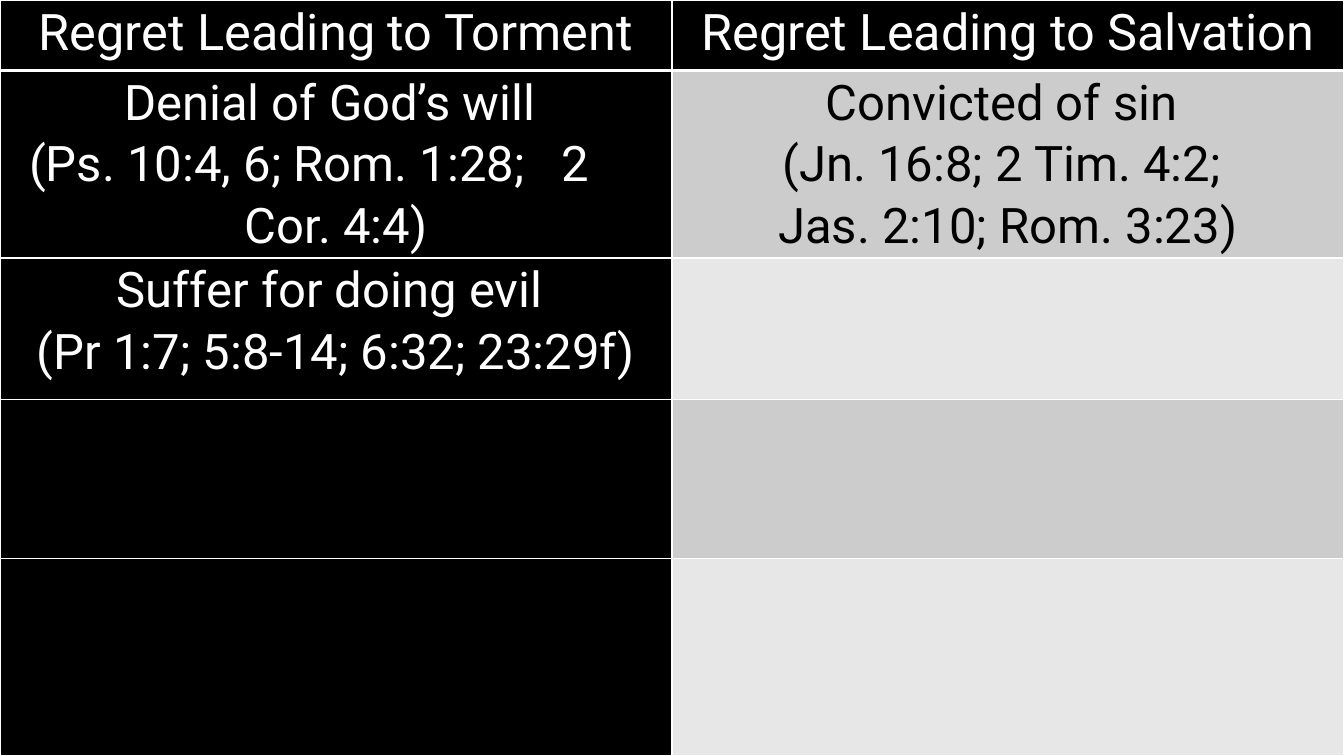
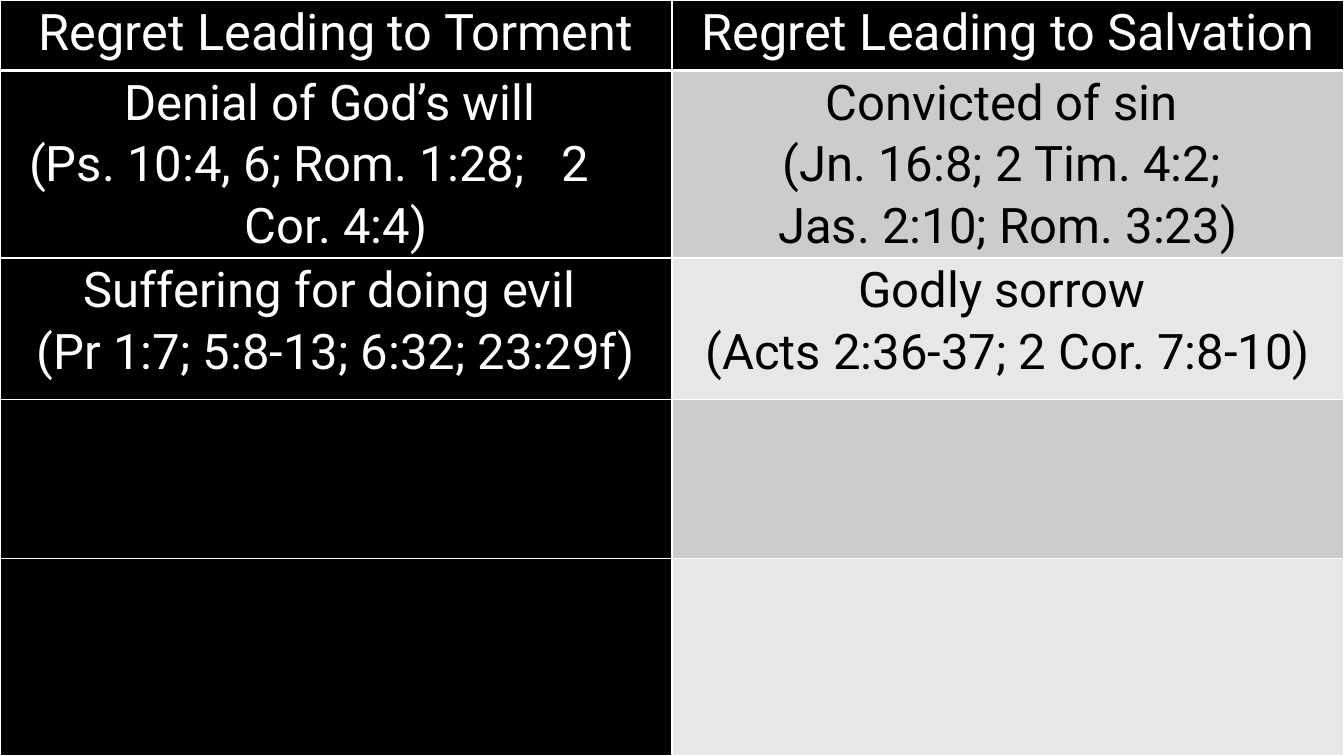
from pptx import Presentation
from pptx.dml.color import RGBColor
from pptx.enum.text import PP_ALIGN
from pptx.oxml.ns import qn
from pptx.util import Inches, Pt
from lxml.etree import SubElement

COLORS = {"black": "000000", "white": "FFFFFF", "mid": "CCCCCC", "light": "E7E7E7"}
FONT = "Roboto"
ROW_HEIGHTS = [0.7, 1.86, 1.4, 1.58, 1.96]
HEADERS = (["Regret Leading to Torment"], ["Regret Leading to Salvation"])
DENIAL = ["Denial of God’s will ", "(Ps. 10:4, 6; Rom. 1:28;\t2", "Cor. 4:4)"]
CONVICTED = ["Convicted of sin ", "(Jn. 16:8; 2 Tim. 4:2; ", "Jas. 2:10; Rom. 3:23)"]
SLIDES = [
    (["Suffer for doing evil ", "(Pr 1:7; 5:8-14; 6:32; 23:29f)"], []),
    (["Suffering for doing evil ", "(Pr 1:7; 5:8-13; 6:32; 23:29f)"],
     ["Godly sorrow ", "(Acts 2:36-37; 2 Cor. 7:8-10)"]),
]


def rgb(name):
    return RGBColor.from_string(COLORS[name])


def set_tab(p, indent, stop):
    pPr = p._p.get_or_add_pPr()
    pPr.set("marL", "0")
    pPr.set("indent", str(Inches(indent)))
    tabs = SubElement(pPr, qn("a:tabLst"))
    SubElement(tabs, qn("a:tab"), pos=str(Inches(stop)), algn="l")


def add_text(p, text, size=35, color="white"):
    p.alignment = PP_ALIGN.CENTER
    if "\t" in text:
        p.alignment = PP_ALIGN.LEFT
        set_tab(p, 0.22, 5.97)
    p.line_spacing = 1.07
    r = p.add_run()
    r.text = text
    r.font.name, r.font.size, r.font.bold = FONT, Pt(size), False
    r.font.color.rgb = rgb(color)


def set_borders(cell, top=1, bottom=1):
    tcPr = cell._tc.get_or_add_tcPr()
    for side, width in (("L", 1), ("R", 1), ("T", top), ("B", bottom)):
        ln = SubElement(tcPr, qn(f"a:ln{side}"), w=str(Pt(width)))
        fill = SubElement(ln, qn("a:solidFill"))
        SubElement(fill, qn("a:srgbClr"), val=COLORS["white"])


def fill_cell(cell, lines, row, col):
    set_borders(cell, top=3 if row == 1 else 1, bottom=3 if row == 0 else 1)
    dark = row == 0 or col == 0
    cell.fill.solid()
    cell.fill.fore_color.rgb = rgb("black" if dark else "mid" if row % 2 else "light")
    cell.margin_left = cell.margin_right = Inches(0.07)
    cell.margin_top = cell.margin_bottom = 0
    tf = cell.text_frame
    for i, line in enumerate(lines):
        p = tf.add_paragraph() if i else tf.paragraphs[0]
        add_text(p, line, size=36 if row == 0 else 35, color="white" if dark else "black")


def add_comparison(s, rows, left, top, width):
    height = Inches(sum(ROW_HEIGHTS))
    table = s.shapes.add_table(len(ROW_HEIGHTS), 2, left, top, width, height).table
    table.first_row = table.horz_banding = False
    for i, h in enumerate(ROW_HEIGHTS):
        table.rows[i].height = Inches(h)
        for j in range(2):
            fill_cell(table.cell(i, j), rows[i][j] if i < len(rows) else [], i, j)


def main():
    prs = Presentation()
    prs.slide_width, prs.slide_height = Inches(13.33), Inches(7.5)
    for sorrow in SLIDES:
        s = prs.slides.add_slide(prs.slide_layouts[6])
        s.background.fill.solid()
        s.background.fill.fore_color.rgb = rgb("black")
        add_comparison(s, [HEADERS, (DENIAL, CONVICTED), sorrow], 0, 0, prs.slide_width)
    prs.save("out.pptx")


if __name__ == "__main__":
    main()
